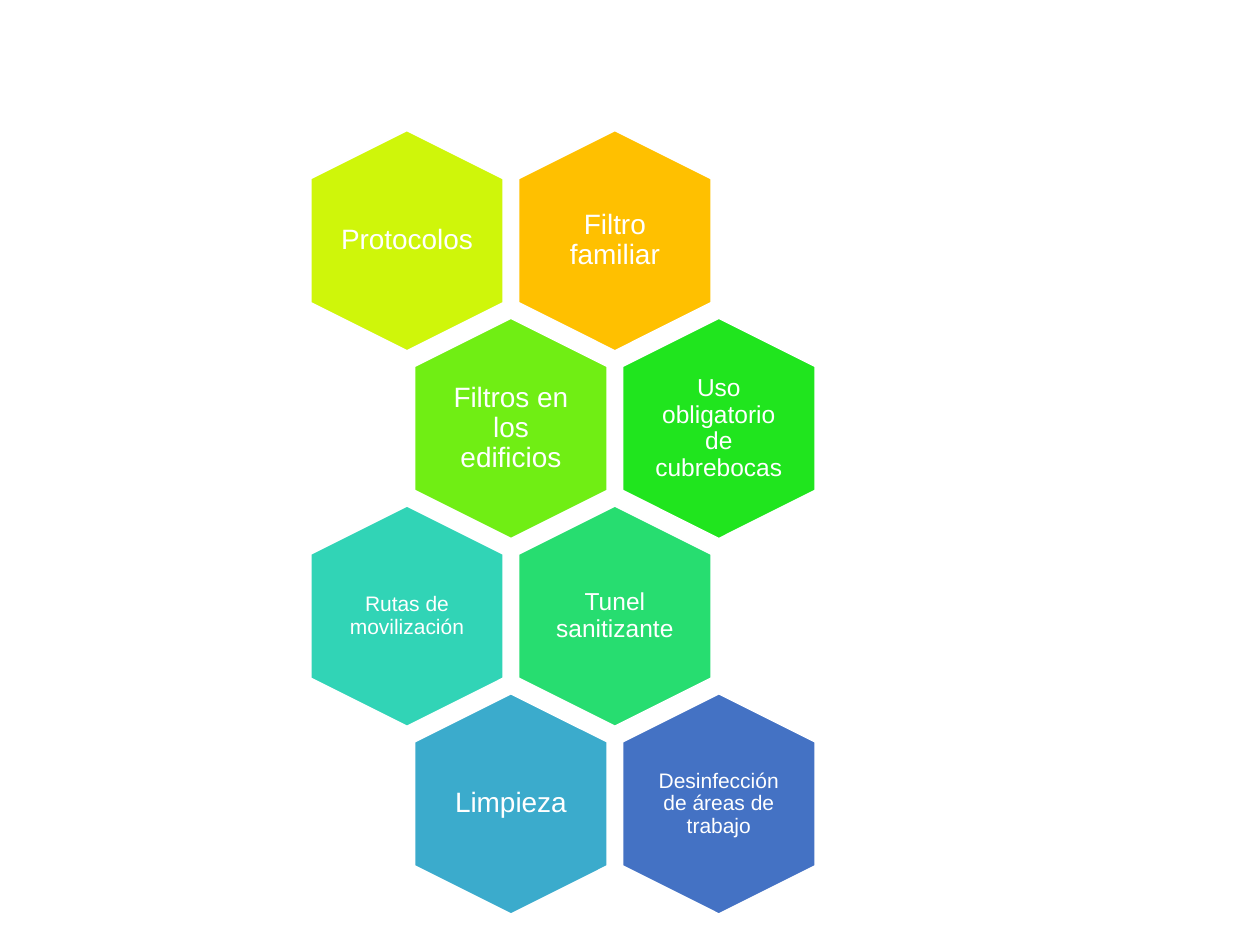
from dataclasses import dataclass

from pptx import Presentation
from pptx.dml.color import RGBColor
from pptx.enum.shapes import MSO_SHAPE as Preset
from pptx.enum.text import MSO_ANCHOR as Anchor, PP_ALIGN as Align
from pptx.shapes.shapetree import GroupShapes
from pptx.util import Inches, Pt

WHITE = RGBColor(0xFF, 0xFF, 0xFF)
AMBER = RGBColor(0xFF, 0xC0, 0x00)
YELLOW = RGBColor(0xCF, 0xF6, 0x0A)
LIME = RGBColor(0x70, 0xEE, 0x14)
GREEN = RGBColor(0x20, 0xE5, 0x1E)
EMERALD = RGBColor(0x27, 0xDD, 0x70)
TURQUOISE = RGBColor(0x31, 0xD4, 0xB6)
SKY = RGBColor(0x3B, 0xAB, 0xCC)
BLUE = RGBColor(0x44, 0x72, 0xC4)

FONT = "Arial"
HEXAGON_WIDTH, HEXAGON_HEIGHT = 1.75, 1.53
LABEL_WIDTH, LABEL_HEIGHT = 1.05, 1.21
FIRST_CENTER_X, FIRST_CENTER_Y = 3.23, 1.91
COLUMN_PITCH, ROW_PITCH = 1.65, 1.49
ODD_ROW_SHIFT = COLUMN_PITCH / 2


@dataclass(frozen=True)
class Measure:
    text: str
    row: int
    column: int
    color: RGBColor
    size: int = 16

    @property
    def center_x(self) -> float:
        shift = ODD_ROW_SHIFT * (self.row % 2)
        return FIRST_CENTER_X + COLUMN_PITCH * self.column + shift

    @property
    def center_y(self) -> float:
        return FIRST_CENTER_Y + ROW_PITCH * self.row


MEASURES = [
    Measure("Filtro familiar", 0, 1, AMBER),
    Measure("Protocolos", 0, 0, YELLOW),
    Measure("Filtros en los edificios", 1, 0, LIME),
    Measure("Uso obligatorio de cubrebocas", 1, 1, GREEN, size=14),
    Measure("Tunel sanitizante", 2, 1, EMERALD, size=14),
    Measure("Rutas de movilización", 2, 0, TURQUOISE, size=12),
    Measure("Limpieza", 3, 0, SKY),
    Measure("Desinfección de áreas de trabajo", 3, 1, BLUE, size=12),
]


def centered_box(center_x: float, center_y: float, width: float, height: float) -> list[int]:
    return [Inches(value) for value in (center_x - width / 2, center_y - height / 2, width, height)]


def add_text(shapes: GroupShapes, text: str, *, box: list[int], size: int,
             color: RGBColor = WHITE) -> None:
    frame = shapes.add_textbox(*box).text_frame
    frame.word_wrap = True
    frame.vertical_anchor = Anchor.MIDDLE
    frame.margin_left = frame.margin_right = Inches(0)
    frame.margin_top = frame.margin_bottom = Inches(0)
    paragraph = frame.paragraphs[0]
    paragraph.alignment = Align.CENTER
    paragraph.line_spacing = 0.9
    run = paragraph.add_run()
    run.text = text
    run.font.name = FONT
    run.font.size = Pt(size)
    run.font.color.rgb = color


def add_measure(shapes: GroupShapes, measure: Measure) -> None:
    center = measure.center_x, measure.center_y
    hexagon = shapes.add_shape(Preset.HEXAGON, *centered_box(*center, HEXAGON_WIDTH, HEXAGON_HEIGHT))
    hexagon.rotation = 90
    hexagon.shadow.inherit = False
    hexagon.fill.solid()
    hexagon.fill.fore_color.rgb = measure.color
    hexagon.line.color.rgb = WHITE
    hexagon.line.width = Pt(1)
    add_text(shapes, measure.text, box=centered_box(*center, LABEL_WIDTH, LABEL_HEIGHT),
             size=measure.size)


def main() -> None:
    presentation = Presentation()
    presentation.slide_width = Inches(10)
    presentation.slide_height = Inches(7.5)
    slide = presentation.slides.add_slide(presentation.slide_layouts[6])
    honeycomb = slide.shapes.add_group_shape()
    for measure in MEASURES:
        add_measure(honeycomb.shapes, measure)
    presentation.save("out.pptx")


if __name__ == "__main__":
    main()
